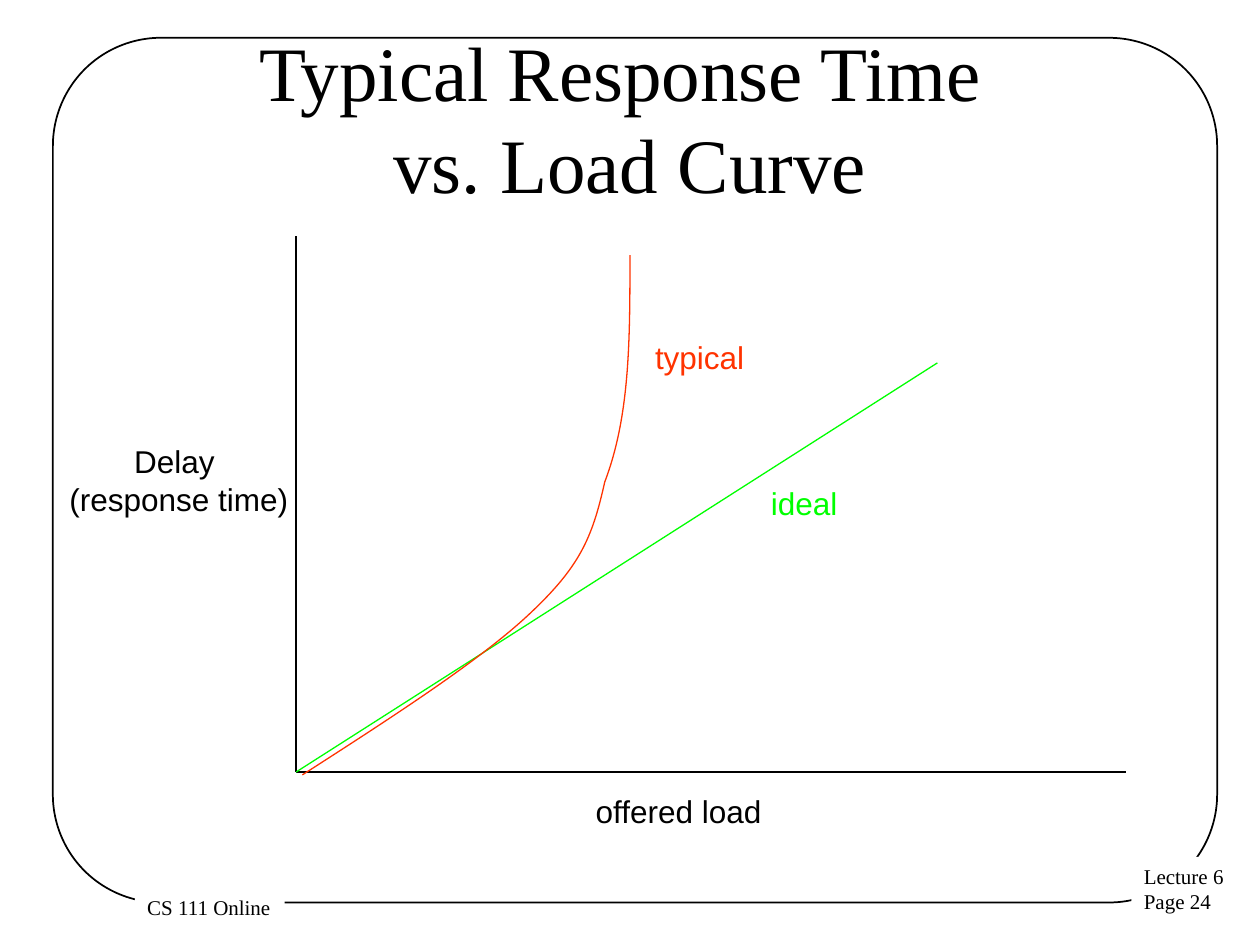
from lxml import etree
from pptx import Presentation
from pptx.dml.color import RGBColor
from pptx.enum.shapes import MSO_CONNECTOR, MSO_SHAPE
from pptx.enum.text import MSO_ANCHOR, PP_ALIGN
from pptx.oxml.ns import qn
from pptx.util import Inches, Pt

ROUNDED = MSO_SHAPE.ROUNDED_RECTANGLE
STRAIGHT = MSO_CONNECTOR.STRAIGHT
LEFT, CENTER = PP_ALIGN.LEFT, PP_ALIGN.CENTER
TOP, MIDDLE = MSO_ANCHOR.TOP, MSO_ANCHOR.MIDDLE
BLACK, WHITE, GREEN, RED = "000000", "FFFFFF", "00FF00", "FF3300"
SERIF, SANS = "Times New Roman", "Arial"


def rgb(value):
    return RGBColor.from_string(value)


def add_text(text, x, y, w, h, size, font, color, align=LEFT, anchor=TOP, fill=None):
    sp = s.shapes.add_textbox(int(x * COL), int(y * ROW), int(w * COL), int(h * ROW))
    if fill:
        sp.fill.solid()
        sp.fill.fore_color.rgb = rgb(fill)
    tf = sp.text_frame
    tf.text = text
    tf.word_wrap = anchor == MIDDLE
    tf.vertical_anchor = anchor
    for p in tf.paragraphs:
        p.alignment = align
        for r in p.runs:
            r.font.size = Pt(size)
            r.font.name = font
            r.font.color.rgb = rgb(color)


prs = Presentation()
prs.slide_width, prs.slide_height = Inches(10), Inches(7.5)
COL, ROW = prs.slide_width // 100, prs.slide_height // 100
s = prs.slides.add_slide(prs.slide_layouts[6])

frame = s.shapes.add_shape(ROUNDED, int(4.2 * COL), 4 * ROW, int(92.4 * COL), int(91.5 * ROW))
frame.adjustments[0] = 0.125
frame.shadow.inherit = False
frame.fill.background()
frame.line.color.rgb = rgb(BLACK)
frame.line.width = Pt(1)

add_text("Lecture 6\nPage 24", 89.8, 90.67, 8.4, 6.8, 12, SERIF, BLACK, fill=WHITE)
add_text("CS 111 Online", 10.7, 94, 11.9, 4, 12, SERIF, BLACK, fill=WHITE)
add_text("Typical Response Time \vvs. Load Curve", 5, 4, 90, 16.67, 44, SERIF, BLACK, CENTER, MIDDLE)

origin = (23.5, 81.7)
for (x, y), color in (((23.5, 25), BLACK), ((89.4, 81.7), BLACK), ((74.4, 38.4), GREEN)):
    line = s.shapes.add_connector(
        STRAIGHT, int(origin[0] * COL), int(origin[1] * ROW), int(x * COL), int(y * ROW)
    )
    line.line.color.rgb = rgb(color)
    line.line.width = Pt(0.75)
    etree.SubElement(line._element.spPr, qn("a:effectLst"))

controls = [
    (30.6, 76), (37.7, 70.27), (41.9, 65.07),
    (46, 59.87), (47.1, 56.93), (48.5, 50.53),
    (49.9, 44.27), (50.1, 35.73), (50.2, 27.2),
]
builder = s.shapes.build_freeform(*origin, scale=(COL, ROW))
builder.add_line_segments(controls, close=False)
curve = builder.convert_to_shape()
segments = list(curve._element.iter(qn("a:lnTo")))
for i in range(0, len(segments), 3):
    bezier = etree.Element(qn("a:cubicBezTo"))
    segments[i].addprevious(bezier)
    for segment in segments[i:i + 3]:
        bezier.append(segment[0])
        segment.getparent().remove(segment)
curve.shadow.inherit = False
curve.fill.background()
curve.line.color.rgb = rgb(RED)
curve.line.width = Pt(0.75)

for text, x, y, w, h, color, align in (
    ("Delay \n(response time)", 4.4, 46.13, 19.6, 9.47, BLACK, CENTER),
    ("ideal", 60.2, 50.53, 7.9, 5.73, GREEN, LEFT),
    ("typical", 51, 35.07, 9.9, 5.73, RED, LEFT),
    ("offered load", 46.3, 83.2, 16.7, 5.73, BLACK, LEFT),
):
    add_text(text, x, y, w, h, 18, SANS, color, align)

prs.save("out.pptx")
